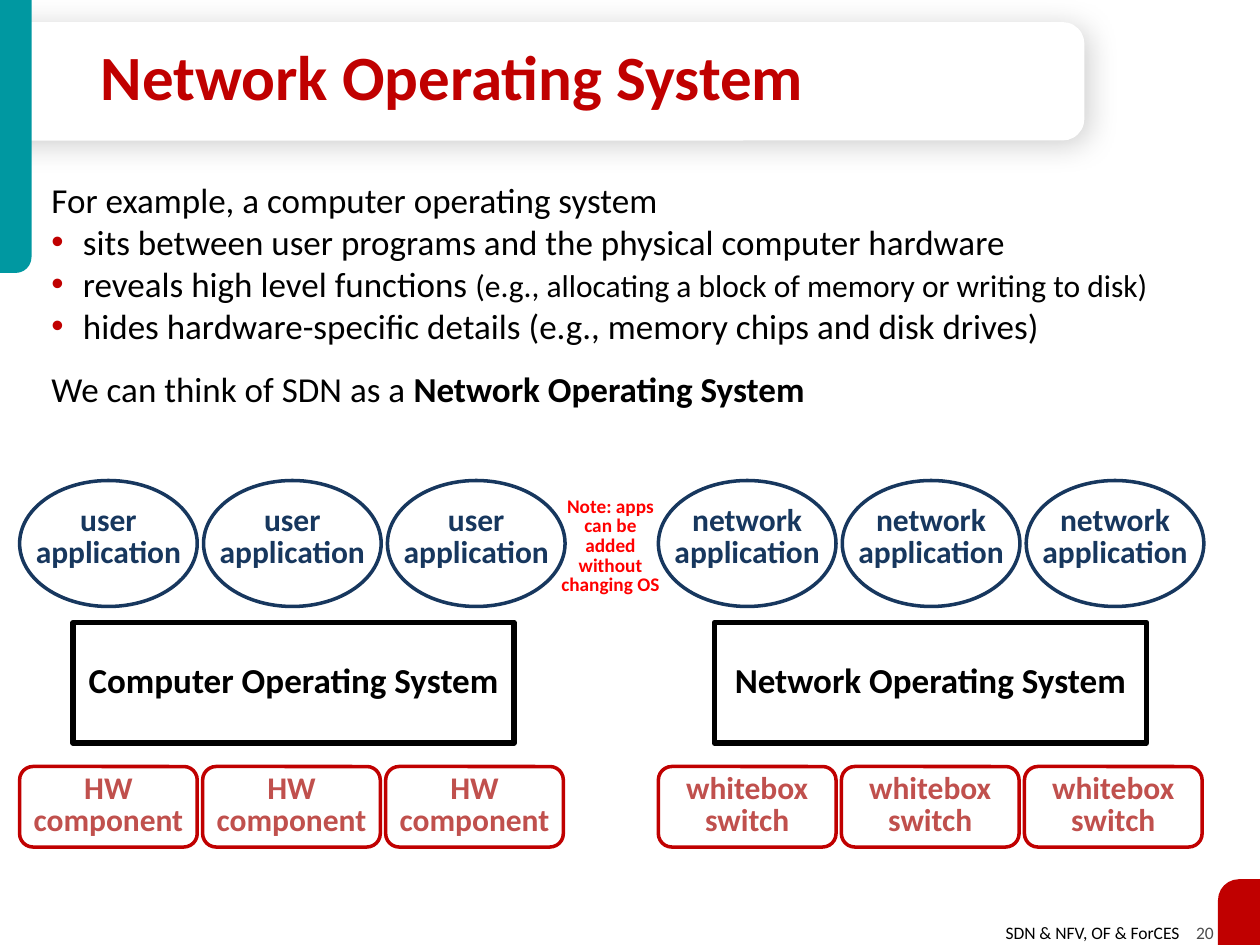
from lxml.etree import SubElement
from pptx import Presentation
from pptx.dml.color import RGBColor
from pptx.enum.shapes import MSO_SHAPE as Kind
from pptx.enum.text import MSO_ANCHOR as Anchor, PP_ALIGN as Align
from pptx.oxml.ns import qn
from pptx.util import Pt

COLORS = {
    "white": "FFFFFF", "black": "000000", "gray": "4D4D4D", "teal": "0098A1",
    "red": "C00000", "bright": "FF0000", "navy": "17375E", "brick": "C0504D",
}

TITLE = "Network Operating System"
# Each body line: bulleted, space before, spans of (text, size, bold)
BODY = [
    (False, 6, [("For example, a computer operating system", 20, False)]),
    (True, 0, [("sits between user programs and the physical computer hardware", 20, False)]),
    (True, 0, [("reveals high level functions ", 20, False),
               ("(e.g., allocating a block of memory or writing to disk)", 18, False)]),
    (True, 0, [("hides hardware-specific details (e.g., memory chips and disk drives)", 20, False)]),
    (False, 12, [("We can think of SDN as a ", 20, False),
                 ("Network Operating System", 20, True)]),
]
NOTE = "Note: apps can be added without changing OS"
# Each footer part: text, left, width, colour
FOOTER = [("SDN & NFV, OF & ForCES", 540, 141, "black"), ("20", 670, 30.6, "gray")]
STACKS = [
    {"left": 11.2, "app": ["user", "application"], "part": ["HW", "component"],
     "system": "Computer Operating System", "system_at": (41.8, 355.7, 252, 69)},
    {"left": 376.2, "app": ["network", "application"], "part": ["whitebox", "switch"],
     "system": "Network Operating System", "system_at": (408.2, 355.7, 247, 69)},
]
COLUMNS = 3
# Each row: outline, top, height, step, line colour, text colour, label offset
ROWS = {
    "app": (Kind.OVAL, 274.6, 72, 105.1, "navy", "navy", 10.8),
    "part": (Kind.ROUNDED_RECTANGLE, 438, 46, 104.6, "red", "brick", 0.7),
}
ITEM_WIDTH, LABEL_WIDTH, LABEL_HEIGHT = 101.5, 106, 44.6


def color(name):
    return RGBColor.from_string(COLORS[name])


def add_shape(shapes, kind, at, fill=None, line=None, weight=2):
    shape = shapes.add_shape(kind, *map(Pt, at))
    shape.shadow.inherit = False
    if fill:
        shape.fill.solid()
        shape.fill.fore_color.rgb = color(fill)
    else:
        shape.fill.background()
    if line:
        shape.line.color.rgb = color(line)
        shape.line.width = Pt(weight)
    else:
        shape.line.fill.background()
    return shape


def add_span(para, text, size, tint, bold=False):
    span = para.add_run()
    span.text = text
    span.font.color.rgb = color(tint)
    for name, value in {"name": "Calibri", "size": Pt(size), "bold": bold}.items():
        setattr(span.font, name, value)


def write(box, lines, size, tint, bold=True, align=Align.CENTER, spacing=0.85,
          anchor=Anchor.TOP):
    frame = box.text_frame
    frame.word_wrap = True
    frame.vertical_anchor = anchor
    for i, line in enumerate(lines):
        para = frame.paragraphs[0] if i == 0 else frame.add_paragraph()
        for name, value in {"alignment": align, "line_spacing": spacing}.items():
            setattr(para, name, value)
        add_span(para, line, size, tint, bold)


def add_text(shapes, at, lines, size, tint, **formats):
    write(shapes.add_textbox(*map(Pt, at)), lines, size, tint, **formats)


def add_soft_shadow(shape):
    effects = shape._element.spPr.find(qn("a:effectLst"))
    shadow = SubElement(effects, qn("a:outerShdw"), blurRad=str(Pt(17)),
                        dist=str(Pt(3)), dir=str(45 * 60000), rotWithShape="0")
    tint = SubElement(shadow, qn("a:srgbClr"), val=COLORS["black"])
    SubElement(tint, qn("a:alpha"), val="19000")


def add_frame(page):
    """Title panel and the two coloured corner tabs."""
    panel = add_shape(page.shapes, Kind.ROUND_2_SAME_RECTANGLE,
                      (275.8, -263.5, 67.7, 620), "white")
    panel.rotation = 90
    panel.adjustments[0] = 0.184
    add_soft_shadow(panel)
    for at, fill, flip in [((0, 0, 18, 156), "teal", "flipV"),
                           ((696, 502.4, 24, 37.6), "red", "flipH")]:
        tab = add_shape(page.shapes, Kind.ROUND_1_RECTANGLE, at, fill)
        tab.adjustments[0] = 0.5
        tab._element.spPr.xfrm.set(flip, "1")


def add_body(page):
    frame = page.shapes.add_textbox(*map(Pt, (22.3, 98.6, 661.7, 170))).text_frame
    frame.word_wrap = True
    for i, (bulleted, before, spans) in enumerate(BODY):
        para = frame.paragraphs[0] if i == 0 else frame.add_paragraph()
        para.space_before = Pt(before)
        for text, size, bold in spans:
            add_span(para, text, size, "black", bold)
        props = para._p.get_or_add_pPr()
        props.set("marL", str(Pt(18)))
        props.set("indent", str(Pt(-18)))
        if bulleted:
            tint = SubElement(props, qn("a:buClr"))
            SubElement(tint, qn("a:srgbClr"), val=COLORS["red"])
            SubElement(props, qn("a:buFont"), typeface="Arial")
            SubElement(props, qn("a:buChar"), char="•")


def add_row(page, stack, role):
    kind, top, height, step, line, tint, offset = ROWS[role]
    for i in range(COLUMNS):
        left = stack["left"] + i * step
        group = page.shapes.add_group_shape()
        add_shape(group.shapes, kind, (left, top, ITEM_WIDTH, height), line=line)
        label_left = left - (LABEL_WIDTH - ITEM_WIDTH) / 2
        add_text(group.shapes, (label_left, top + offset, LABEL_WIDTH, LABEL_HEIGHT),
                 stack[role], 18, tint)


def main():
    deck = Presentation()
    deck.slide_width, deck.slide_height = Pt(720), Pt(540)
    page = deck.slides.add_slide(deck.slide_layouts[6])
    add_frame(page)
    for text, left, width, tint in FOOTER:
        add_text(page.shapes, (left, 523.4, width, 19.4), [text], 10, tint,
                 bold=False, align=Align.RIGHT, spacing=1.0)
    add_text(page.shapes, (50.4, 20.9, 532.8, 51), [TITLE], 36, "red",
             align=Align.LEFT, anchor=Anchor.MIDDLE)
    add_body(page)
    for stack in STACKS:
        add_row(page, stack, "app")
        system = add_shape(page.shapes, Kind.RECTANGLE, stack["system_at"],
                           line="black", weight=3)
        write(system, [stack["system"]], 20, "black", anchor=Anchor.MIDDLE)
        add_row(page, stack, "part")
    add_text(page.shapes, (312.5, 280.8, 72.7, 64), [NOTE], 11, "bright")
    deck.save("out.pptx")


if __name__ == "__main__":
    main()
